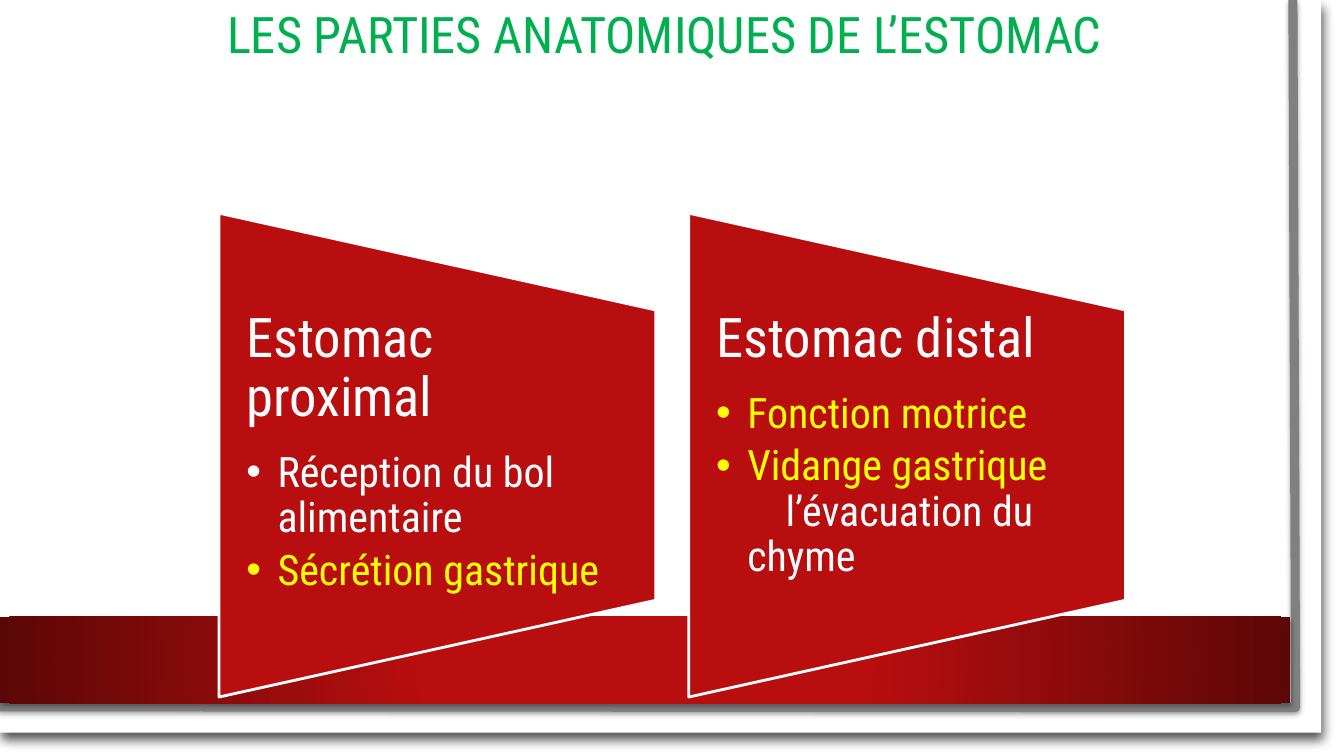
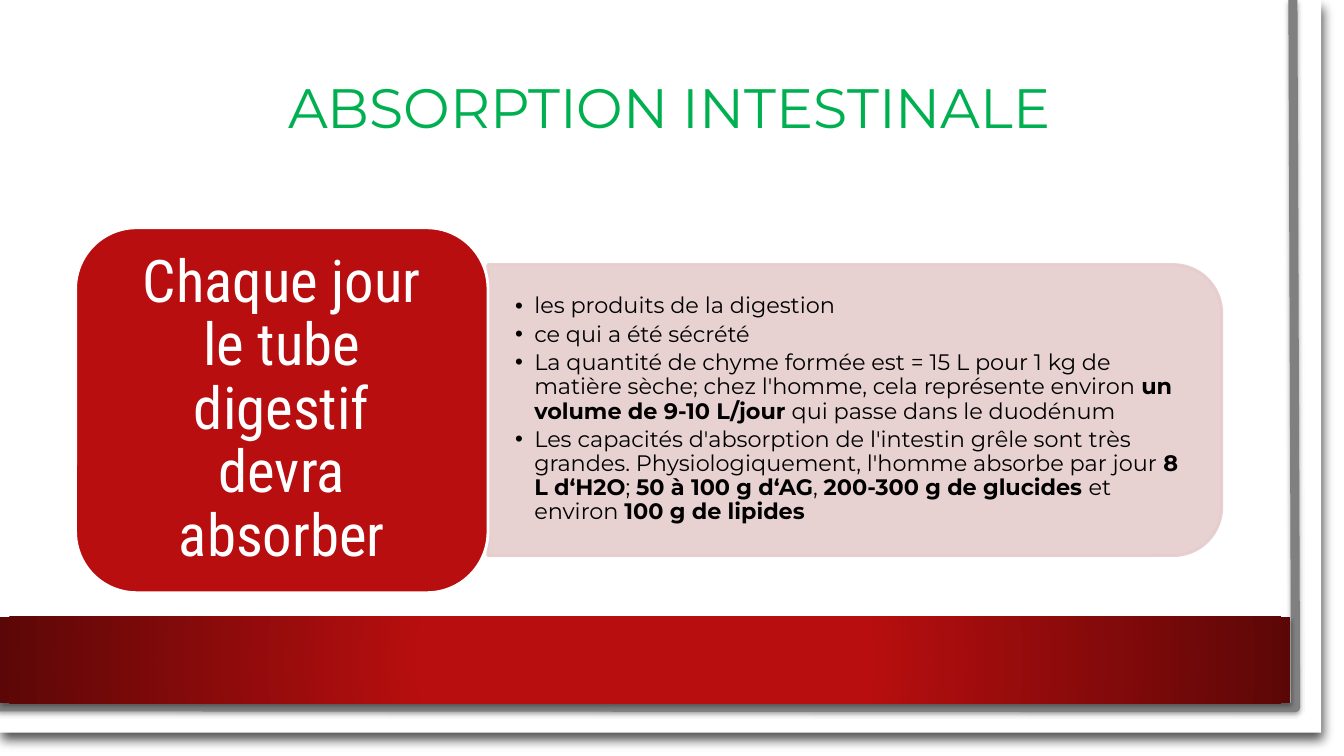
from lxml import etree
from pptx import Presentation
from pptx import util as u
from pptx.dml.color import RGBColor
from pptx.enum import shapes, text
from pptx.oxml.ns import qn

COLORS = {
    "title": "00B050",
    "red": "B80E0F",
    "dark red": "5C0707",
    "pink": "E6CCCC",
    "edge": "808080",
    "white": "FFFFFF",
    "black": "000000",
    "yellow": "FFFF00",
}
CONDENSED = "Roboto Condensed"
WIDE = "Montserrat"
TWO_LISTS, ONE_LIST = 3, 1


def rgb(name):
    return RGBColor.from_string(COLORS[name])


class Builder:
    def __init__(self):
        self.deck = Presentation()
        self.deck.slide_width = u.Inches(13.33)
        self.deck.slide_height = u.Inches(7.5)
        self.page = None

    def x(self, share):
        return round(self.deck.slide_width * share / 100)

    def y(self, share):
        return round(self.deck.slide_height * share / 100)

    def box(self, left, top, width, height):
        return self.x(left), self.y(top), self.x(width), self.y(height)

    def start_page(self, layout):
        self.page = self.deck.slides.add_slide(self.deck.slide_layouts[layout])
        self.frame()
        for holder in list(self.page.placeholders):
            tree = holder.element.getparent()
            tree.append(holder.element)

    def frame(self):
        sheet = self.shape("RECTANGLE", (0, 0, 98.3, 96.93), "white")
        self.shadow(sheet, 68, 7.8, 6, 73)

        outline = self.page.shapes.build_freeform(self.x(96.2), 0)
        corners = [(96.4, 93.6), (-0.2, 93.5)]
        outline.add_line_segments([(self.x(a), self.y(b)) for a, b in corners], close=False)
        edge = outline.convert_to_shape()
        edge.fill.background()
        edge.line.color.rgb = rgb("edge")
        edge.line.width = u.Pt(6.5)
        self.shadow(edge, 38, 3.1, 1.6, 90)

        band = self.shape("RECTANGLE", (0, 81.6, 96, 11.4), "red")
        band.fill.gradient()
        for stop, color, position in zip(band.fill.gradient_stops, ("red", "dark red"), (0.34, 1)):
            stop.color.rgb = rgb(color)
            stop.position = position
        gradient = band.element.spPr.find(qn("a:gradFill"))
        gradient.remove(gradient.find(qn("a:lin")))
        circle = etree.SubElement(gradient, qn("a:path"), path="circle")
        etree.SubElement(circle, qn("a:fillToRect"), dict.fromkeys("ltrb", "50000"))
        self.shadow(band, 35, 3.1, 1.8, 90)

    def shadow(self, shape, opacity, blur, distance, angle):
        shape.shadow.inherit = False
        effects = shape.element.spPr.find(qn("a:effectLst"))
        outer = etree.SubElement(
            effects, qn("a:outerShdw"), blurRad=str(u.Pt(blur)), dist=str(u.Pt(distance)),
            dir=str(angle * 60000), algn="ctr", rotWithShape="0")
        color = etree.SubElement(outer, qn("a:srgbClr"), val=COLORS["black"])
        etree.SubElement(color, qn("a:alpha"), val=str(opacity * 1000))

    def shape(self, kind, area, fill, line=None, turn=0, opacity=100):
        left, top, width, height = self.box(*area)
        if turn:
            left, top = left + (width - height) // 2, top + (height - width) // 2
            width, height = height, width
        preset = shapes.MSO_SHAPE[kind]
        shape = self.page.shapes.add_shape(preset, left, top, width, height)
        shape.rotation = turn
        shape.shadow.inherit = False
        shape.fill.solid()
        shape.fill.fore_color.rgb = rgb(fill)
        if line:
            shape.line.color.rgb = rgb(line)
            shape.line.width = u.Pt(2)
        else:
            shape.line.fill.background()
        if opacity < 100:
            for color in shape.element.spPr.iter(qn("a:srgbClr")):
                etree.SubElement(color, qn("a:alpha"), val=str(opacity * 1000))
        return shape

    def text_frame(self, shape, anchor, side=0.1, end=0.05):
        frame = shape.text_frame
        frame.word_wrap = True
        frame.auto_size = text.MSO_AUTO_SIZE.NONE
        frame.vertical_anchor = anchor
        frame.margin_left = frame.margin_right = u.Inches(side)
        frame.margin_top = frame.margin_bottom = u.Inches(end)
        return frame

    def format(self, para, size, font, color, after=0):
        para.line_spacing = 0.9
        para.space_before = u.Pt(0)
        para.space_after = u.Pt(after)
        para.font.size = u.Pt(size)
        para.font.name = font
        para.font.color.rgb = rgb(color)

    def title(self, words, area, size, font):
        holder = self.page.shapes.title
        holder.left, holder.top, holder.width, holder.height = self.box(*area)
        para = self.text_frame(holder, text.MSO_ANCHOR.MIDDLE).paragraphs[0]
        para.text = words
        para.alignment = text.PP_ALIGN.CENTER
        self.format(para, size, font, "title")

    def label(self, shape, words, size):
        frame = self.text_frame(shape, text.MSO_ANCHOR.MIDDLE, 0.35, 0.26)
        para = frame.paragraphs[0]
        para.text = words
        para.alignment = text.PP_ALIGN.CENTER
        self.format(para, size, CONDENSED, "white")

    def list(self, index, area, items, anchor, end=0):
        holder = self.page.placeholders[index]
        holder.left, holder.top, holder.width, holder.height = self.box(*area)
        frame = self.text_frame(holder, anchor, 0.27, end)
        for number, (words, style) in enumerate(items):
            para = frame.paragraphs[0] if number == 0 else frame.add_paragraph()
            self.item(para, words, **style)

    def item(self, para, words, margin=0, indent=0, bullet=False, **style):
        for part, piece in enumerate(words.split("**")):
            if piece:
                span = para.add_run()
                span.text = piece
                if part % 2:
                    span.font.bold = True
        props = para._p.get_or_add_pPr()
        props.set("marL", str(u.Inches(margin)))
        props.set("indent", str(u.Inches(indent)))
        if bullet:
            etree.SubElement(props, qn("a:buChar"), char="•")
        else:
            etree.SubElement(props, qn("a:buNone"))
        self.format(para, **style)


def stomach_parts(builder):
    heading = dict(size=39, font=CONDENSED, color="white", after=16)
    plain = dict(size=30, font=CONDENSED, color="white", after=5.3,
                 margin=0.31, indent=-0.31, bullet=True)
    marked = {**plain, "color": "yellow"}
    lead = {**marked, "after": 0}
    detail = {**plain, "indent": 0.38, "bullet": False}
    columns = [
        [("Estomac proximal", heading),
         ("Réception du bol alimentaire", plain),
         ("Sécrétion gastrique", marked)],
        [("Estomac distal", heading),
         ("Fonction motrice", marked),
         ("Vidange gastrique", lead),
         ("l’évacuation du chyme", detail)],
    ]
    builder.start_page(TWO_LISTS)
    builder.title("LES PARTIES ANATOMIQUES DE L’ESTOMAC", (15.7, 0, 67.5, 9.73), 36, CONDENSED)
    for number, items in enumerate(columns):
        left = 16.3 + 34.95 * number
        builder.shape("FLOWCHART_MANUAL_OPERATION", (left, 28.2, 32.5, 64), "red", "white", 270)
        builder.list(number + 1, (left, 41.07, 32.5, 38.4), items, text.MSO_ANCHOR.TOP)
    for holder in list(builder.page.placeholders):
        tree = holder.element.getparent()
        tree.append(holder.element)


def absorption(builder):
    point = dict(size=16, font=WIDE, color="black", after=3,
                 margin=0.19, indent=-0.19, bullet=True)
    points = [
        "les produits de la digestion",
        "ce qui a été sécrété",
        "La quantité de chyme formée est = 15 L pour 1 kg de matière sèche; chez l'homme, "
        "cela représente environ **un volume de 9-10 L/jour** qui passe dans le duodénum",
        "Les capacités d'absorption de l'intestin grêle sont très grandes. Physiologiquement, "
        "l'homme absorbe par jour **8 L d‘H2O**; **50 à 100 g d‘AG**, "
        "**200-300 g de glucides **et environ **100 g de lipides**",
    ]
    builder.start_page(ONE_LIST)
    builder.title("ABSORPTION INTESTINALE", (16.05, 6.27, 67.5, 16.67), 39.6, WIDE)
    builder.shape("ROUND_2_SAME_RECTANGLE", (36.3, 35, 54.6, 38.5), "pink", "pink", 90, 90)
    block = builder.shape("ROUNDED_RECTANGLE", (5.63, 30.13, 30.68, 48.27), "red", "white")
    builder.label(block, "Chaque jour le tube digestif devra absorber", 42)
    builder.list(1, (36.3, 36.8, 53.5, 34.8), [(words, point) for words in points],
                 text.MSO_ANCHOR.MIDDLE, 0.14)
    holder = builder.page.placeholders[1].element
    holder.getparent().append(holder)


def main():
    builder = Builder()
    stomach_parts(builder)
    absorption(builder)
    builder.deck.save("out.pptx")


if __name__ == "__main__":
    main()
